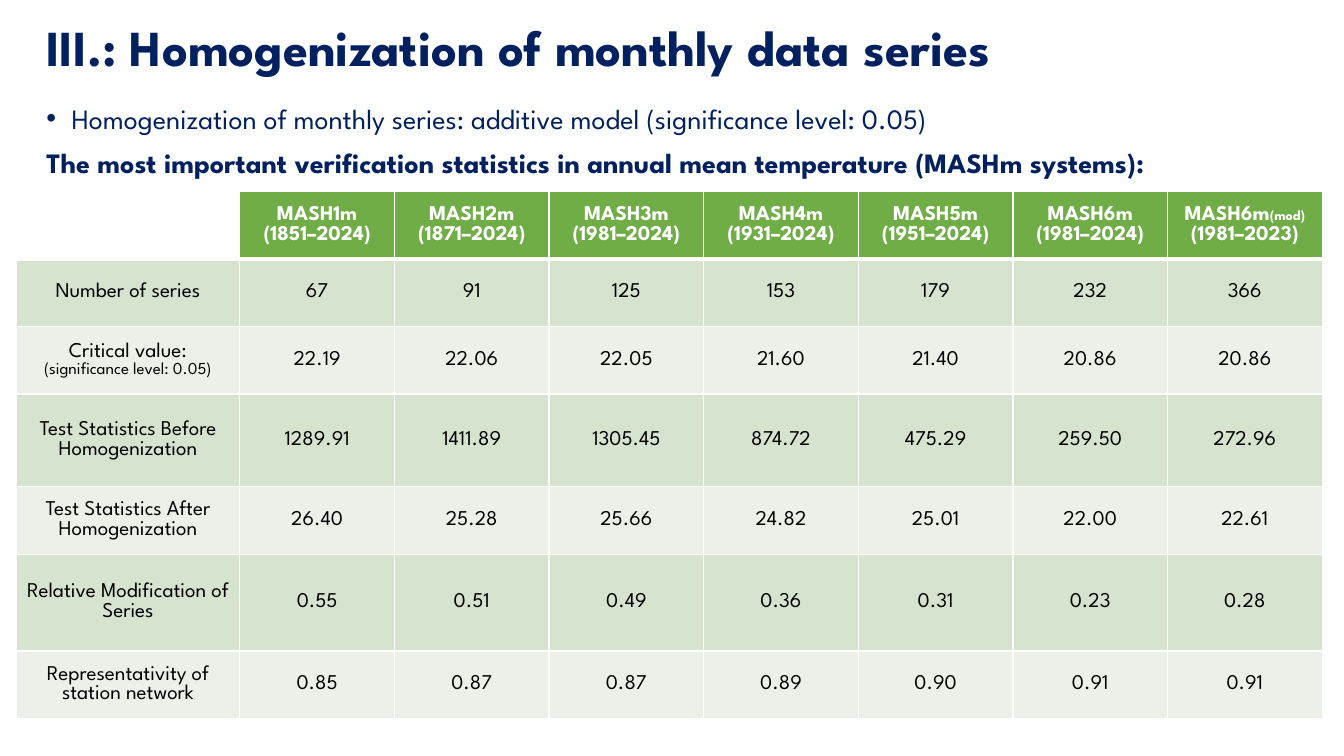
from dataclasses import dataclass
from typing import Any

from lxml import etree
from pptx import Presentation
from pptx import util as u
from pptx.dml import color
from pptx.enum import text
from pptx.oxml import ns

COLORS = {
    "navy": "002060",
    "white": "FFFFFF",
    "black": "000000",
    "header": "70AD47",
    "odd_row": "D5E3CF",
    "even_row": "EBF1E9",
}
FONT = "League Spartan"
CELL_SIZE = 15
LINE_BREAK = "\v"


@dataclass
class Run:
    text: str
    size: float = CELL_SIZE


@dataclass
class System:
    name: str
    period: str
    suffix: str = ""
    separator: str = "\n"


@dataclass
class Statistic:
    label: list[Run]
    values: str
    height: float = 48.24


SYSTEMS = [
    System("MASH1m", "(1851–2024)"),
    System("MASH2m", "(1871–2024)"),
    System("MASH3m", "(1981–2024)"),
    System("MASH4m", "(1931–2024)"),
    System("MASH5m", "(1951–2024)"),
    System("MASH6m", "(1981–2024)", separator=LINE_BREAK),
    System("MASH6m", "(1981–2023)", suffix="(mod)"),
]
STATISTICS = [
    Statistic([Run("Number of series")], "67 91 125 153 179 232 366"),
    Statistic([Run("Critical value:" + LINE_BREAK), Run("(significance level: 0.05)", 12)],
              "22.19 22.06 22.05 21.60 21.40 20.86 20.86"),
    Statistic([Run("Test Statistics Before Homogenization")],
              "1289.91 1411.89 1305.45 874.72 475.29 259.50 272.96", 66.24),
    Statistic([Run("Test Statistics After Homogenization")],
              "26.40 25.28 25.66 24.82 25.01 22.00 22.61"),
    Statistic([Run("Relative Modification of Series")],
              "0.55 0.51 0.49 0.36 0.31 0.23 0.28", 69.12),
    Statistic([Run("Representativity of station network")],
              "0.85 0.87 0.87 0.89 0.90 0.91 0.91"),
]
HEADER_HEIGHT = 48.24
LABEL_WIDTH = 159.84
VALUE_WIDTH = 110.45


def set_attributes(target: Any, values: dict[str, Any]) -> None:
    for name, value in values.items():
        setattr(target, name, value)


def format_font(font: Any, size: float, color_name: str, bold: bool) -> None:
    set_attributes(font, {"name": FONT, "size": u.Pt(size), "bold": bold})
    font.color.rgb = color.RGBColor.from_string(COLORS[color_name])


def place(shape: Any, left: float, top: float, width: float, height: float) -> None:
    bounds = {"left": left, "top": top, "width": width, "height": height}
    set_attributes(shape, {name: u.Pt(value) for name, value in bounds.items()})


def set_bullet(paragraph: Any, character: str = "") -> None:
    properties = paragraph._p.get_or_add_pPr()
    indent = u.Pt(18) if character else 0
    properties.set("marL", str(indent))
    properties.set("indent", str(-indent))
    if character:
        etree.SubElement(properties, ns.qn("a:buFont"), typeface="Arial")
        etree.SubElement(properties, ns.qn("a:buChar"), char=character)
    else:
        etree.SubElement(properties, ns.qn("a:buNone"))


def set_borders(cell: Any, widths: dict[str, float]) -> None:
    properties = cell._tc.get_or_add_tcPr()
    for side, width in widths.items():
        line = etree.SubElement(properties, ns.qn(f"a:ln{side}"), w=str(u.Pt(width)))
        fill = etree.SubElement(line, ns.qn("a:solidFill"))
        etree.SubElement(fill, ns.qn("a:srgbClr"), val=COLORS["white"])


def write_cell(cell: Any, runs: list[Run], color_name: str, bold: bool) -> None:
    cell.vertical_anchor = text.MSO_ANCHOR.MIDDLE
    paragraph = cell.text_frame.paragraphs[0]
    paragraph.alignment = text.PP_ALIGN.CENTER
    for item in runs:
        if item.text == "\n":
            paragraph = cell.text_frame.add_paragraph()
            paragraph.alignment = text.PP_ALIGN.CENTER
            continue
        for index, line in enumerate(item.text.split(LINE_BREAK)):
            if index:
                paragraph.add_line_break()
            if line:
                run = paragraph.add_run()
                run.text = line
                format_font(run.font, item.size, color_name, bold)


def header_runs(system: System) -> list[Run]:
    if system.separator == LINE_BREAK:
        return [Run(system.name + LINE_BREAK + system.period)]
    suffix = [Run(system.suffix, 10)] if system.suffix else []
    return [Run(system.name), *suffix, Run("\n"), Run(system.period)]


def add_title(slide: Any) -> None:
    title = slide.shapes.title
    place(title, 25.92, 0, 788.4, 71.28)
    frame = title.text_frame
    frame.text = "III.: Homogenization of monthly data series"
    set_attributes(frame, {"vertical_anchor": text.MSO_ANCHOR.MIDDLE,
                           "auto_size": text.MSO_AUTO_SIZE.NONE, "word_wrap": True})
    paragraph = frame.paragraphs[0]
    set_attributes(paragraph, {"alignment": text.PP_ALIGN.LEFT, "line_spacing": 0.9})
    format_font(paragraph.runs[0].font, 36, "navy", True)


def add_body(slide: Any) -> None:
    body = slide.placeholders[1]
    place(body, 25.92, 71.28, 874.08, 444.24)
    frame = body.text_frame
    frame.text = (
        "Homogenization of monthly series: additive model (significance level: 0.05)\n"
        "The most important verification statistics in annual mean temperature (MASHm systems):"
    )
    set_attributes(frame, {"vertical_anchor": text.MSO_ANCHOR.TOP,
                           "auto_size": text.MSO_AUTO_SIZE.NONE, "word_wrap": True})
    for paragraph, bullet, space in zip(frame.paragraphs, ("•", ""), (0, 10)):
        set_bullet(paragraph, bullet)
        set_attributes(paragraph, {"line_spacing": 0.9, "space_before": u.Pt(space)})
        format_font(paragraph.runs[0].font, 20, "navy", not bullet)


def add_statistics_table(slide: Any) -> None:
    heights = [HEADER_HEIGHT] + [statistic.height for statistic in STATISTICS]
    widths = [LABEL_WIDTH] + [VALUE_WIDTH] * len(SYSTEMS)
    frame = slide.shapes.add_table(len(heights), len(widths), u.Pt(11.52), u.Pt(136.8),
                                   u.Pt(sum(widths)), u.Pt(sum(heights)))
    table = frame.table
    for row, height in zip(table.rows, heights):
        row.height = u.Pt(height)
    for column, width in zip(table.columns, widths):
        column.width = u.Pt(width)

    contents = [[[]] + [header_runs(system) for system in SYSTEMS]]
    for statistic in STATISTICS:
        contents.append([statistic.label] + [[Run(value)] for value in statistic.values.split()])
    for row_index, row_contents in enumerate(contents):
        is_header = row_index == 0
        fill_name = "header" if is_header else ("even_row", "odd_row")[row_index % 2]
        borders = {"L": 1, "R": 1, "T": 3 if row_index == 1 else 1, "B": 3 if is_header else 1}
        for column_index, runs in enumerate(row_contents):
            cell = table.cell(row_index, column_index)
            set_borders(cell, borders)
            if runs:
                cell.fill.solid()
                cell.fill.fore_color.rgb = color.RGBColor.from_string(COLORS[fill_name])
                write_cell(cell, runs, "white" if is_header else "black", is_header)
            else:
                cell.fill.background()


def main() -> None:
    presentation = Presentation()
    set_attributes(presentation, {"slide_width": u.Pt(960), "slide_height": u.Pt(540)})
    slide = presentation.slides.add_slide(presentation.slide_layouts[1])
    add_title(slide)
    add_body(slide)
    add_statistics_table(slide)
    presentation.save("out.pptx")


if __name__ == "__main__":
    main()
